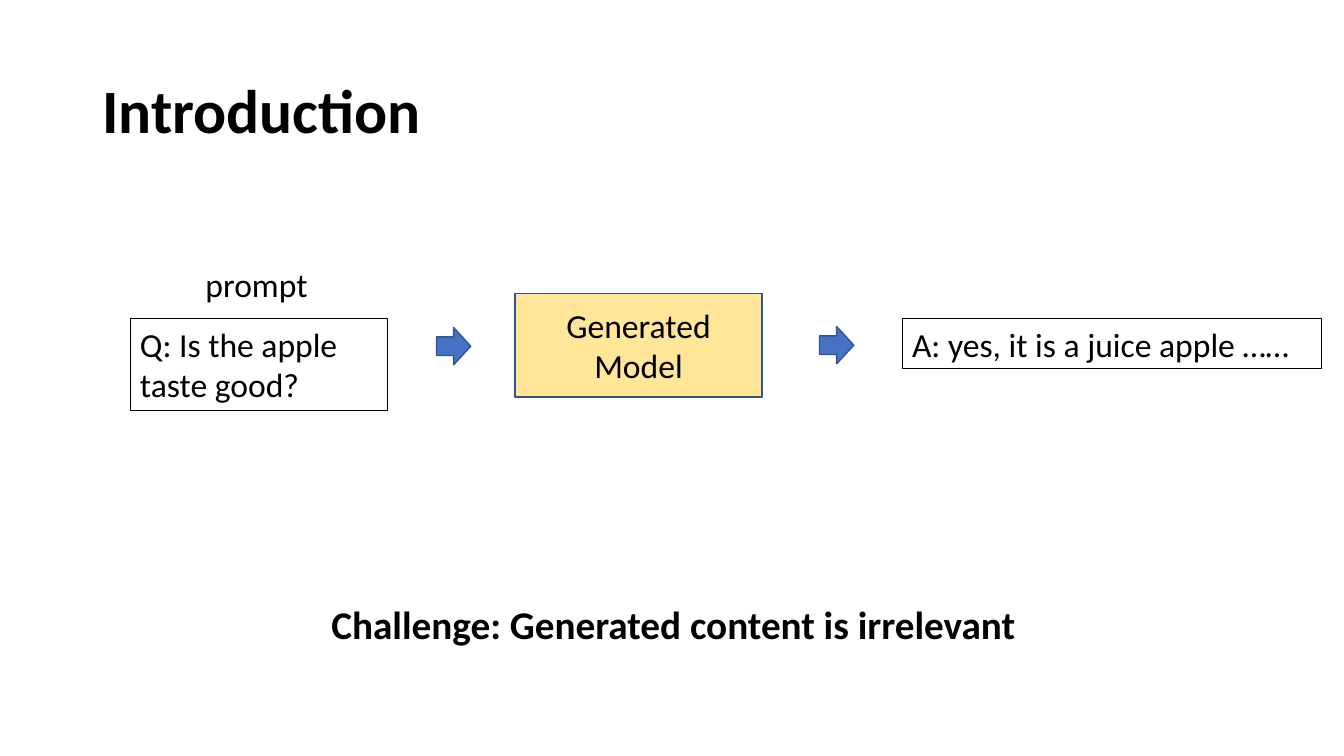
from pptx import Presentation
from pptx.dml.color import RGBColor
from pptx.enum.shapes import MSO_SHAPE as Shape
from pptx.enum.text import MSO_ANCHOR as Anchor, PP_ALIGN as Align
from pptx.util import Pt

FONT = "Calibri"
BLACK, BLUE, NAVY, YELLOW = "000000", "4472C4", "325491", "FFE699"


def color(value):
    return RGBColor.from_string(value)


def write(shape, text, size=24, bold=False, align=Align.LEFT, anchor=Anchor.TOP):
    frame = shape.text_frame
    frame.word_wrap = True
    frame.vertical_anchor = anchor
    para = frame.paragraphs[0]
    para.alignment = align
    span = para.add_run()
    span.text = text
    span.font.name = FONT
    span.font.size = Pt(size)
    span.font.bold = bold
    span.font.color.rgb = color(BLACK)
    return para


def add_label(page, box, text, **style):
    label = page.shapes.add_textbox(*map(Pt, box))
    write(label, text, **style)


def add_block(page, kind, box, fill=None, line=BLACK, weight=0.75):
    block = page.shapes.add_shape(kind, *map(Pt, box))
    block.shadow.inherit = False
    if fill:
        block.fill.solid()
        block.fill.fore_color.rgb = color(fill)
    else:
        block.fill.background()
    block.line.color.rgb = color(line)
    block.line.width = Pt(weight)
    return block


def add_title(page, box, text):
    title = page.shapes.title
    title.left, title.top, title.width, title.height = map(Pt, box)
    para = write(title, text, size=44, bold=True, anchor=Anchor.MIDDLE)
    para.line_spacing = 0.9


def add_pipeline(page, box):
    left, top, width, height = box
    text_top = top + 42.5

    # Prompt with its caption
    question = add_block(page, Shape.RECTANGLE,
                         (left, text_top, 183.6, height - 42.5))
    write(question, "Q: Is the apple taste good?")
    add_label(page, (left + 46.8, top, 89.3, 36), "prompt")

    # Model between two arrows
    model = add_block(page, Shape.RECTANGLE, (left + 275, top + 24.5, 176.4, 74.2),
                      YELLOW, NAVY, 1)
    write(model, "Generated Model", align=Align.CENTER, anchor=Anchor.MIDDLE)
    for x, y in ((218.9, 49), (492.5, 48.3)):
        add_block(page, Shape.RIGHT_ARROW, (left + x, top + y, 24.5, 26.6),
                  BLUE, NAVY, 1)

    # Answer at the right end
    answer = add_block(page, Shape.RECTANGLE,
                       (left + width - 299.5, text_top, 299.5, 36))
    write(answer, "A: yes, it is a juice apple ……")


def main():
    deck = Presentation()
    deck.slide_width, deck.slide_height = Pt(960), Pt(540)
    page = deck.slides.add_slide(deck.slide_layouts[5])
    add_title(page, (66, 28.8, 828, 104.4), "Introduction")
    add_pipeline(page, (92.9, 185, 851, 108))
    # Closing statement
    add_label(page, (229.7, 425.5, 527.8, 41),
              "Challenge: Generated content is irrelevant", size=28, bold=True)
    deck.save("out.pptx")


if __name__ == "__main__":
    main()
